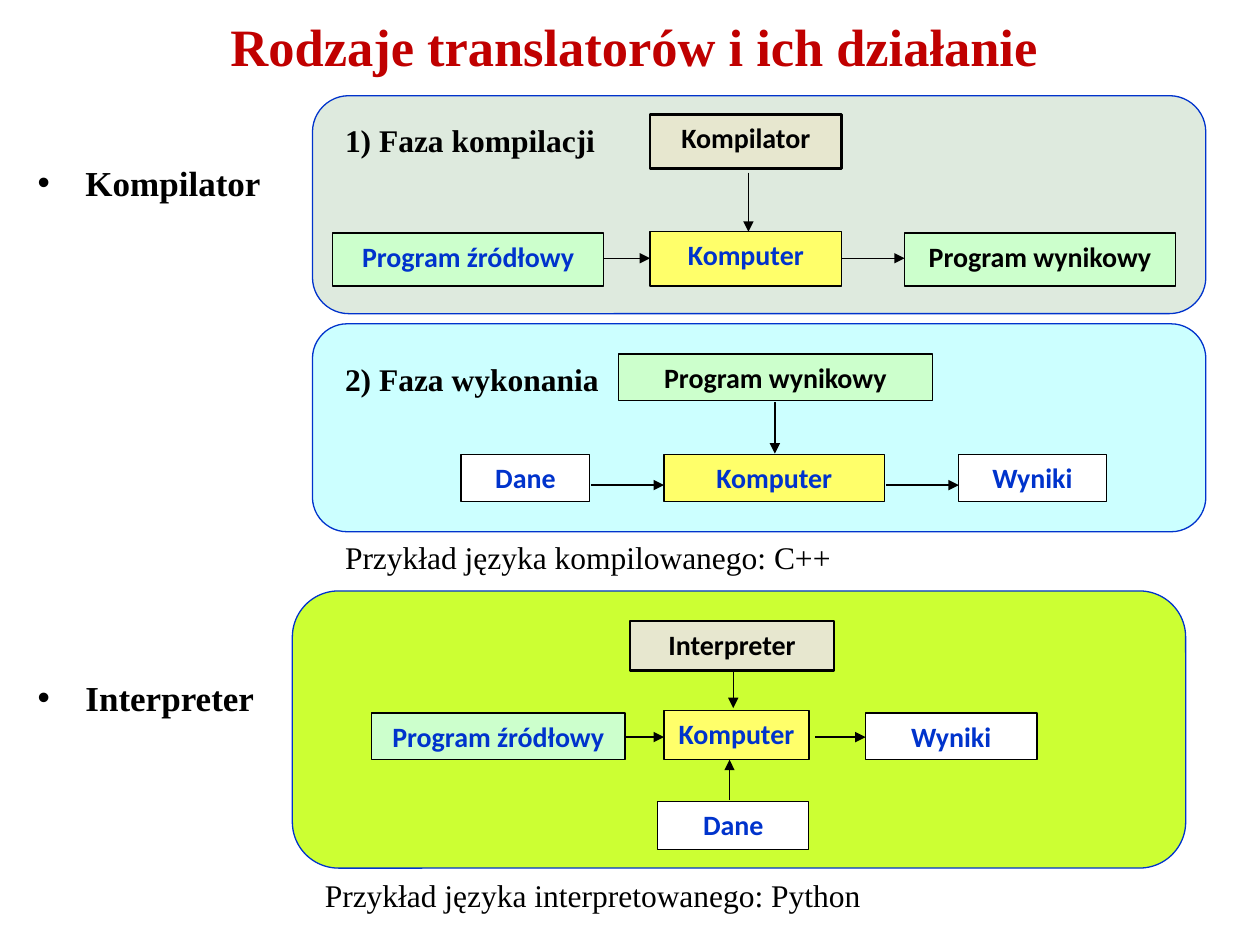
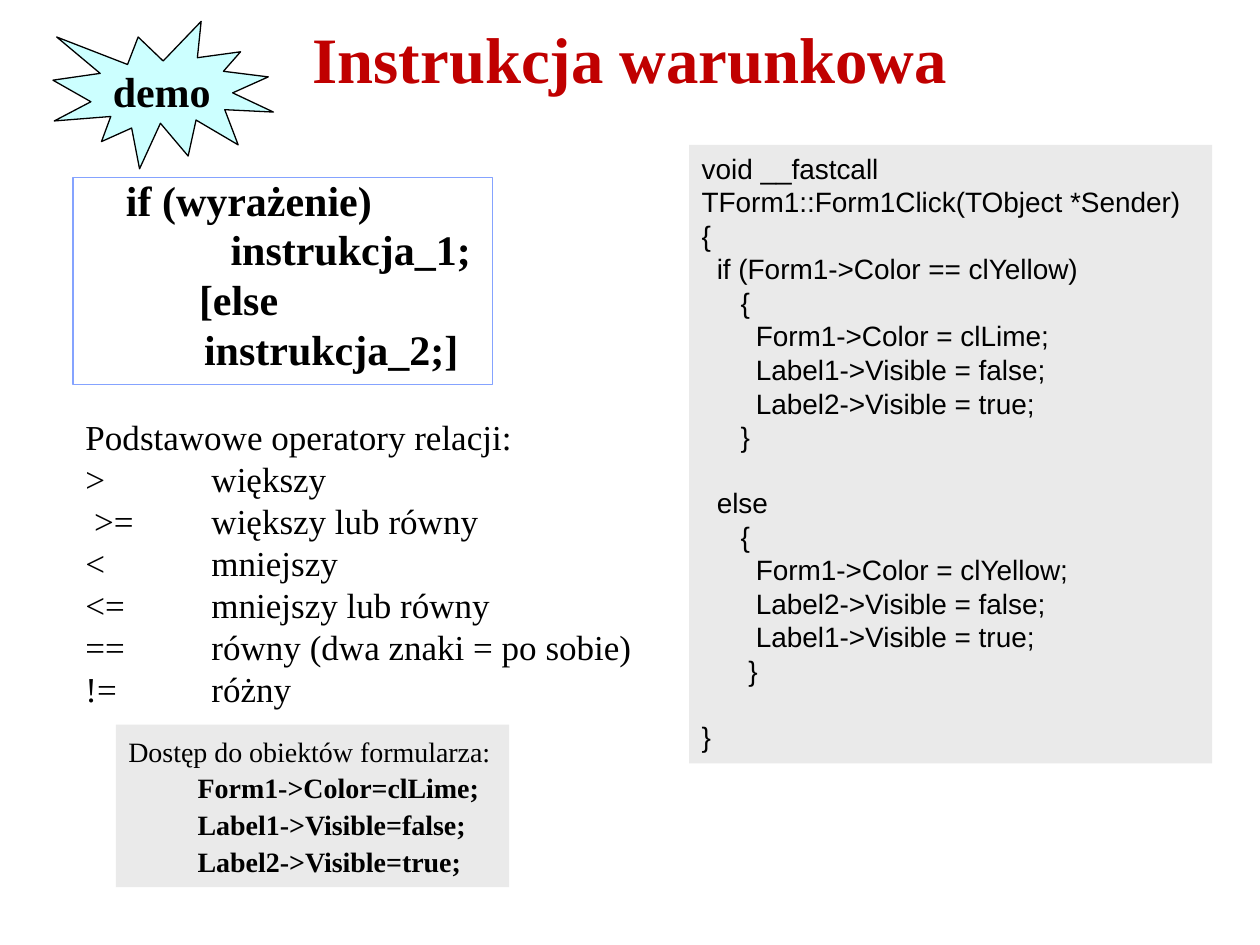
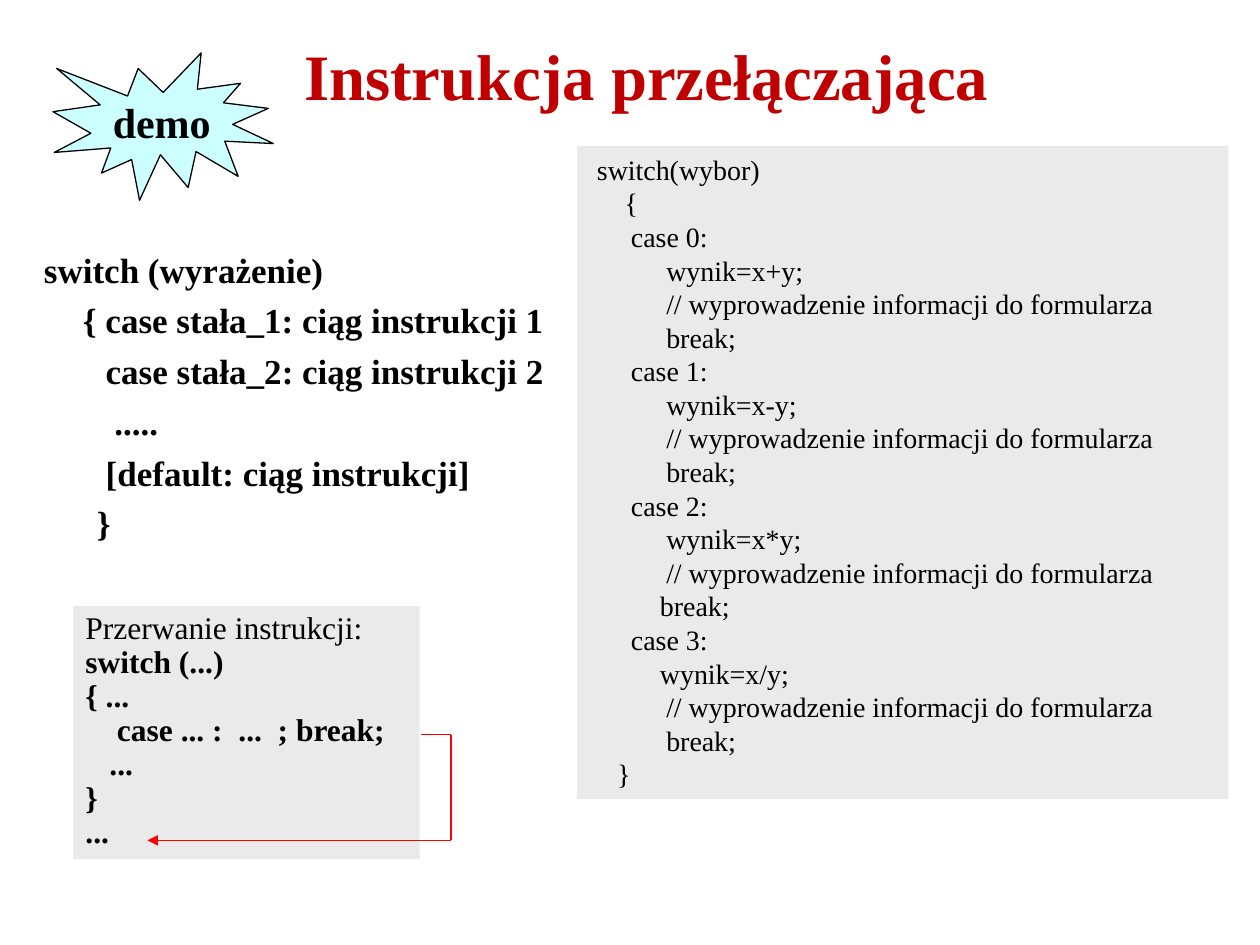
"""Build three slides on translators and on the if and switch statements."""
import lxml.etree
import pptx
import pptx.dml.color
import pptx.enum.shapes
import pptx.enum.text
import pptx.oxml.ns
import pptx.util

Inches = pptx.util.Inches
Pt = pptx.util.Pt
RGBColor = pptx.dml.color.RGBColor
SHAPE = pptx.enum.shapes.MSO_SHAPE
ALIGN = pptx.enum.text.PP_ALIGN
ANCHOR = pptx.enum.text.MSO_ANCHOR

BLACK = RGBColor(0x00, 0x00, 0x00)
WHITE = RGBColor(0xFF, 0xFF, 0xFF)
RED = RGBColor(0xFF, 0x00, 0x00)
CRIMSON = RGBColor(0xC0, 0x00, 0x00)
BLUE = RGBColor(0x00, 0x33, 0xCC)
PALE_BLUE = RGBColor(0x85, 0xA3, 0xFF)
CYAN = RGBColor(0xCC, 0xFF, 0xFF)
SAGE = RGBColor(0xDE, 0xEA, 0xDE)
LIME = RGBColor(0xCC, 0xFF, 0x33)
MINT = RGBColor(0xCC, 0xFF, 0xCC)
YELLOW = RGBColor(0xFF, 0xFF, 0x6A)
SAND = RGBColor(0xE7, 0xE7, 0xCF)
GRAY = RGBColor(0xEA, 0xEA, 0xEA)

SERIF, SANS, LABEL = "Times New Roman", "Arial", "Calibri"


def add_node(parent, tag, **attrs):
    return lxml.etree.SubElement(parent, pptx.oxml.ns.qn(tag), attrs)


class Deck:
    def __init__(self):
        self.prs = pptx.Presentation()
        self.prs.slide_width = Inches(10)
        self.prs.slide_height = Inches(7.5)
        self.slide = None

    def style(self, para, size, font=SERIF, color=BLACK, bold=False):
        for run in para.runs:
            run.font.size = Pt(size)
            run.font.name = font
            run.font.color.rgb = color
            run.font.bold = bold

    def start(self, title, box, size):
        self.slide = self.prs.slides.add_slide(self.prs.slide_layouts[5])
        head = self.slide.shapes.title
        head.left, head.top, head.width, head.height = map(Inches, box)
        frame = head.text_frame
        frame.text = title
        frame.auto_size = pptx.enum.text.MSO_AUTO_SIZE.NONE
        frame.vertical_anchor = ANCHOR.MIDDLE
        frame.paragraphs[0].alignment = ALIGN.CENTER
        self.style(frame.paragraphs[0], size, SERIF, CRIMSON, True)

    def shape(self, kind, box, fill=None, line=None, weight=0.75):
        item = self.slide.shapes.add_shape(kind, *map(Inches, box))
        item.shadow.inherit = False
        if fill is None:
            item.fill.background()
        else:
            item.fill.solid()
            item.fill.fore_color.rgb = fill
        if line is None:
            item.line.fill.background()
        else:
            item.line.color.rgb = line
            item.line.width = Pt(weight)
        return item

    def panel(self, box, fill):
        self.shape(SHAPE.ROUNDED_RECTANGLE, box, fill, BLUE)

    def block(self, text, box, fill, color=BLUE, weight=0.75):
        frame = self.shape(SHAPE.RECTANGLE, box, fill, BLACK, weight).text_frame
        frame.text = text
        frame.vertical_anchor = ANCHOR.TOP
        para = frame.paragraphs[0]
        para.alignment = ALIGN.CENTER
        para.space_after = Pt(10)
        self.style(para, 16, LABEL, color, True)

    def line(self, start, end, color=BLACK, arrow=True):
        item = self.slide.shapes.add_connector(
            pptx.enum.shapes.MSO_CONNECTOR.STRAIGHT, *map(Inches, start + end))
        item.line.color.rgb = color
        item.line.width = Pt(0.75)
        if arrow:
            add_node(item.line._get_or_add_ln(), "a:tailEnd", type="triangle")
        add_node(item._element.spPr, "a:effectLst")

    def note(self, text, box, size=18, bold=False):
        item = self.slide.shapes.add_textbox(*map(Inches, box))
        item.text_frame.word_wrap = True
        item.text_frame.text = text
        for para in item.text_frame.paragraphs:
            self.style(para, size, bold=bold)
        return item.text_frame

    def bullet(self, text, box):
        para = self.note(text, box, 20, True).paragraphs[0]
        para.space_before = Pt(4)
        props = para._p.get_or_add_pPr()
        props.set("marL", str(Inches(0.38)))
        props.set("indent", str(-Inches(0.38)))
        add_node(props, "a:buFont", typeface="Arial")
        add_node(props, "a:buChar", char="•")

    def code(self, lines, box, size=16, font=SERIF, fill=GRAY, line=None,
             bold=False, lead=None, before=0, plain=0):
        """Set lines of (indent in inches, text, optional gap in points)."""
        frame = self.shape(SHAPE.RECTANGLE, box, fill, line).text_frame
        frame.word_wrap = True
        frame.vertical_anchor = ANCHOR.TOP
        frame.text = "\n".join(row[1] for row in lines)
        for index, (para, row) in enumerate(zip(frame.paragraphs, lines)):
            para.alignment = ALIGN.LEFT
            para.line_spacing = lead
            para.space_before = Pt(row[2] if len(row) > 2 else before)
            para._p.get_or_add_pPr().set("marL", str(Inches(row[0])))
            self.style(para, size, font, BLACK, bold and index >= plain)
        return frame

    def demo(self, top):
        frame = self.shape(SHAPE.EXPLOSION1, (0.42, top, 1.75, 1.17),
                           CYAN, BLACK).text_frame
        frame.text = "demo"
        frame.word_wrap = False
        frame.vertical_anchor = ANCHOR.MIDDLE
        frame.paragraphs[0].alignment = ALIGN.CENTER
        self.style(frame.paragraphs[0], 24, bold=True)


def build_kinds(deck):
    deck.start("Rodzaje translatorów i ich działanie", (-0.28, 0.13, 10.63, 0.47), 30)
    deck.bullet("Kompilator", (0.2, 1.23, 2.13, 0.55))
    deck.bullet("Interpreter", (0.2, 5.32, 1.97, 0.47))

    deck.panel((2.48, 0.76, 7.09, 1.73), SAGE)
    deck.panel((2.48, 2.57, 7.09, 1.65), CYAN)
    deck.panel((2.32, 4.69, 7.09, 2.2), LIME)

    deck.block("Program źródłowy", (2.64, 1.85, 2.15, 0.42), MINT)
    deck.block("Komputer", (5.16, 1.84, 1.52, 0.43), YELLOW)
    deck.block("Program wynikowy", (7.18, 1.85, 2.15, 0.42), MINT, BLACK)
    deck.block("Kompilator", (5.16, 0.91, 1.52, 0.43), SAND, BLACK, 1.5)

    deck.block("Program wynikowy", (4.91, 2.81, 2.49, 0.37), MINT, BLACK)
    deck.block("Dane", (3.66, 3.61, 1.02, 0.37), WHITE)
    deck.block("Komputer", (5.27, 3.61, 1.75, 0.37), YELLOW)
    deck.block("Wyniki", (7.61, 3.61, 1.17, 0.37), WHITE)

    deck.block("Program źródłowy", (2.95, 5.66, 2.01, 0.37), MINT)
    deck.block("Komputer", (5.27, 5.64, 1.15, 0.39), YELLOW)
    deck.block("Wyniki", (6.87, 5.66, 1.36, 0.37), WHITE)
    deck.block("Interpreter", (5, 4.93, 1.62, 0.39), SAND, BLACK, 1.5)
    deck.block("Dane", (5.22, 6.36, 1.2, 0.38), WHITE)

    for y, left, right in [(2.05, 4.79, 5.16), (2.05, 6.68, 7.18),
                           (3.85, 4.69, 5.27), (3.85, 7.03, 7.61),
                           (5.85, 4.97, 5.27), (5.85, 6.47, 6.87)]:
        deck.line((left, y), (right, y))
    for x, start, end in [(5.94, 1.37, 1.84), (6.15, 3.19, 3.6),
                          (5.82, 5.32, 5.62), (5.79, 6.35, 6.03)]:
        deck.line((x, start), (x, end))

    deck.note("1) Faza kompilacji", (2.64, 0.91, 2.36, 0.39), bold=True)
    deck.note("2) Faza wykonania", (2.64, 2.81, 2.36, 0.4), bold=True)
    deck.note("Przykład języka kompilowanego: C++", (2.64, 4.22, 5, 0.4))
    deck.note("Przykład języka interpretowanego: Python", (2.48, 6.9, 5, 0.4))


def build_if(deck):
    deck.start("Instrukcja warunkowa", (0.75, 0.17, 8.5, 0.58), 37)
    frame = deck.code(
        [(0.42, "if (wyrażenie)"), (1.25, "instrukcja_1;"),
         (1, "[else"), (1.04, "instrukcja_2;]")],
        (0.58, 1.41, 3.33, 1.64), 24, fill=None, line=PALE_BLUE,
        bold=True, lead=0.8, before=5.5)
    frame.margin_left = frame.margin_right = 0

    signs = [(">", "większy"), (" >=", "większy lub równy"), ("<", "mniejszy"),
             ("<=", "mniejszy lub równy"), ("==", "równy (dwa znaki = po sobie)"),
             ("!=", "różny")]
    rows = ["Podstawowe operatory relacji:"] + ["\t".join(pair) for pair in signs]
    frame = deck.note("\n".join(rows), (0.58, 3.25, 4.65, 2.46), 20)
    for para in frame.paragraphs[1:]:
        tabs = add_node(para._p.get_or_add_pPr(), "a:tabLst")
        add_node(tabs, "a:tab", pos=str(Inches(1)), algn="l")

    deck.demo(0.17)
    gap = 18.4
    deck.code(
        [(0, "void __fastcall TForm1::Form1Click(TObject *Sender)"),
         (0, "{"),
         (0.12, "if (Form1->Color == clYellow)"),
         (0.31, "{"),
         (0.43, "Form1->Color = clLime;"),
         (0.43, "Label1->Visible = false;"),
         (0.43, "Label2->Visible = true;"),
         (0.31, "}"),
         (0.12, "else", gap),
         (0.31, "{"),
         (0.43, "Form1->Color = clYellow;"),
         (0.43, "Label2->Visible = false;"),
         (0.43, "Label1->Visible = true;"),
         (0.37, "}"),
         (0, "}", gap)],
        (5.47, 1.15, 4.15, 4.91), font=SANS)
    deck.code(
        [(0, "Dostęp do obiektów formularza:"),
         (0.55, "Form1->Color=clLime;"),
         (0.55, "Label1->Visible=false;"),
         (0.55, "Label2->Visible=true;")],
        (0.92, 5.75, 3.12, 1.29), bold=True, lead=1.1, plain=1)


def build_switch(deck):
    deck.start("Instrukcja przełączająca", (0.88, 0.3, 8.5, 0.58), 37)
    deck.code(
        [(0.5, "switch (wyrażenie)"),
         (0.81, "{ case stała_1: ciąg instrukcji 1"),
         (0.99, "case stała_2: ciąg instrukcji 2"),
         (1.06, "....."),
         (0.99, "[default: ciąg instrukcji]"),
         (0.92, "}")],
        (-0.25, 1.92, 5.25, 2.92), 20, fill=None, bold=True, before=5)

    lines = [(0.06, "switch(wybor)"), (0.28, "{")]
    cases = [("+", 0.61, 0.61), ("-", 0.61, 0.61), ("*", 0.61, 0.56), ("/", 0.56, 0.61)]
    for number, (sign, first, last) in enumerate(cases):
        lines += [(0.33, f"case {number}:"),
                  (first, f"wynik=x{sign}y;"),
                  (0.61, "// wyprowadzenie informacji do formularza"),
                  (last, "break;")]
    lines.append((0.22, "}"))
    deck.code(lines, (4.58, 1.16, 5.17, 5.18))

    deck.demo(0.42)
    deck.code(
        [(0, "Przerwanie instrukcji:"), (0, "switch (...)"), (0, "{ ..."),
         (0.25, "case ... :  ...  ; break;"), (0.19, "..."), (0, "}"), (0, "...")],
        (0.58, 4.81, 2.75, 2.01), 18, bold=True, lead=0.9, plain=1)
    route = [(3.34, 5.83), (3.58, 5.83), (3.58, 6.67), (1.17, 6.67)]
    for start, end in zip(route, route[1:]):
        deck.line(start, end, RED, end == route[-1])


def main():
    deck = Deck()
    build_kinds(deck)
    build_if(deck)
    build_switch(deck)
    deck.prs.save("out.pptx")


if __name__ == "__main__":
    main()
